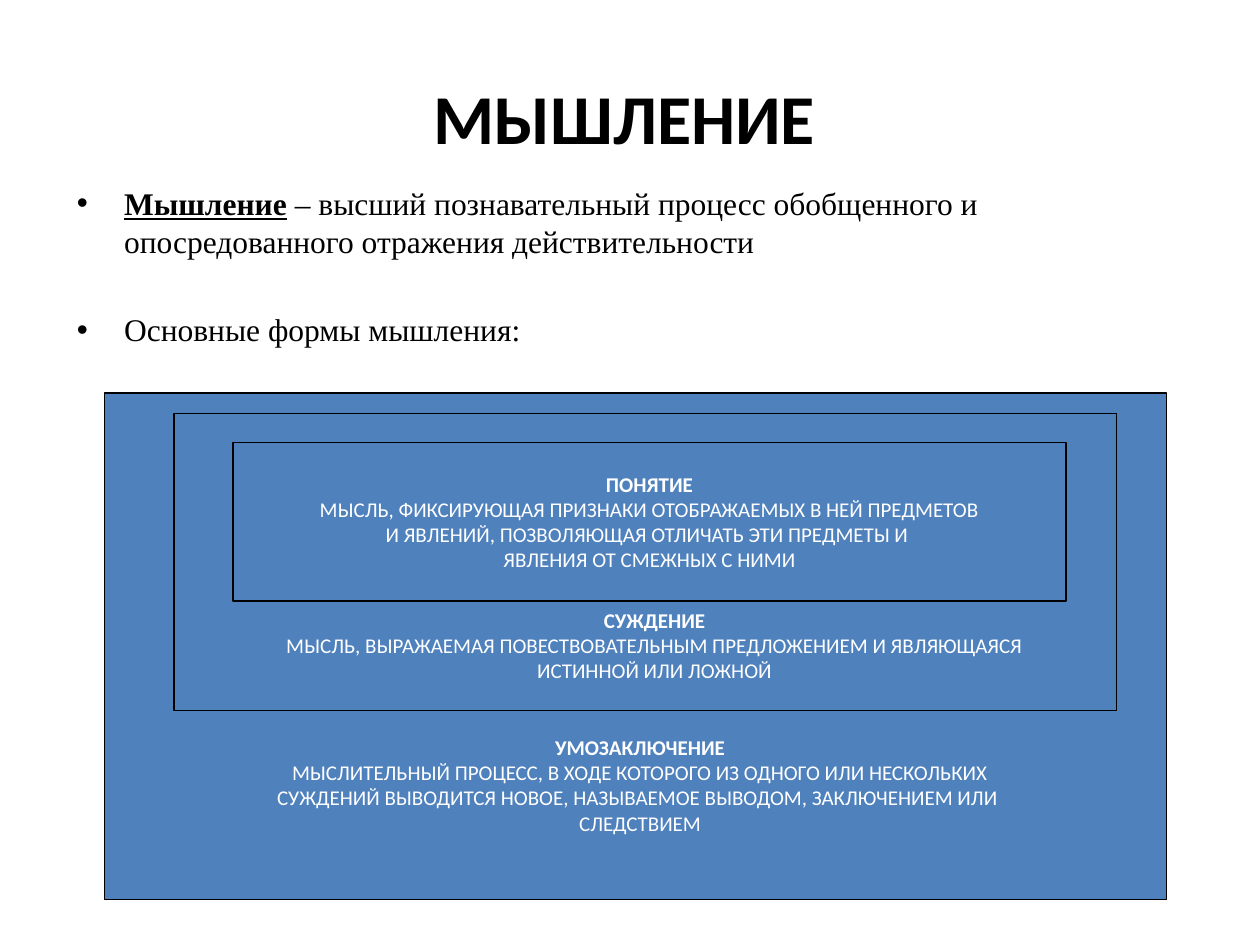
"""Build a slide on thinking and its three nested forms."""
from dataclasses import dataclass

import pptx
import pptx.dml.color
import pptx.enum.shapes
import pptx.enum.text
import pptx.util

CELL = pptx.util.Inches(0.1)
COLS, ROWS = 100, 75


@dataclass(frozen=True)
class Theme:
    fill: str = "4F81BD"
    dark: str = "000000"
    light: str = "FFFFFF"
    heading_font: str = "Calibri"
    body_font: str = "Times New Roman"
    title: int = 40
    title_end: int = 28
    body: int = 18
    label: int = 12
    line: float = 0.75
    item_gap: int = 29


@dataclass(frozen=True)
class Box:
    col: float
    row: float
    cols: float
    rows: float

    def emu(self) -> list[int]:
        return [round(n * CELL) for n in (self.col, self.row, self.cols, self.rows)]


@dataclass(frozen=True)
class Form:
    name: str
    lines: tuple[str, ...]
    frame: Box
    label: Box
    wrap: bool = True


THEME = Theme()
TITLE = Box(5, 3, 90, 12.5)
BODY = Box(5.1, 14.1, 90, 53.3)
CONCEPT = Box(18.5, 35.1, 66.1, 12.6)
FORMS = (
    Form("УМОЗАКЛЮЧЕНИЕ",
         ("МЫСЛИТЕЛЬНЫЙ ПРОЦЕСС, В ХОДЕ КОТОРОГО ИЗ ОДНОГО ИЛИ НЕСКОЛЬКИХ",
          "СУЖДЕНИЙ ВЫВОДИТСЯ НОВОЕ, НАЗЫВАЕМОЕ ВЫВОДОМ, ЗАКЛЮЧЕНИЕМ ИЛИ ",
          "СЛЕДСТВИЕМ"),
         Box(8.3, 31.2, 84.3, 40.2), Box(12.2, 57.8, 77.2, 11.1)),
    Form("СУЖДЕНИЕ",
         ("МЫСЛЬ, ВЫРАЖАЕМАЯ ПОВЕСТВОВАТЕЛЬНЫМ ПРЕДЛОЖЕНИЕМ И ЯВЛЯЮЩАЯСЯ "
          "ИСТИННОЙ ИЛИ ЛОЖНОЙ",),
         Box(13.8, 32.8, 74.8, 23.6), Box(17.7, 47.7, 68.5, 7.1)),
    Form("ПОНЯТИЕ",
         ("МЫСЛЬ, ФИКСИРУЮЩАЯ ПРИЗНАКИ ОТОБРАЖАЕМЫХ В НЕЙ ПРЕДМЕТОВ",
          "И ЯВЛЕНИЙ, ПОЗВОЛЯЮЩАЯ ОТЛИЧАТЬ ЭТИ ПРЕДМЕТЫ И ",
          "ЯВЛЕНИЯ ОТ СМЕЖНЫХ С НИМИ"),
         CONCEPT, CONCEPT, wrap=False),
)


def rgb(value: str) -> pptx.dml.color.RGBColor:
    return pptx.dml.color.RGBColor.from_string(value)


def add_run(p, text: str, font: str, size: int, color: str,
            bold: bool = False, underline: bool = False) -> None:
    r = p.add_run()
    r.text = text
    r.font.name, r.font.size = font, pptx.util.Pt(size)
    r.font.bold, r.font.underline = bold, underline
    r.font.color.rgb = rgb(color)


def place(sp, box: Box) -> None:
    sp.left, sp.top, sp.width, sp.height = box.emu()


def fill_title(sp) -> None:
    place(sp, TITLE)
    p = sp.text_frame.paragraphs[0]
    p.alignment = pptx.enum.text.PP_ALIGN.CENTER
    add_run(p, "МЫШЛЕНИЕ", THEME.heading_font, THEME.title, THEME.dark, bold=True)
    add_run(p, " ", THEME.heading_font, THEME.title_end, THEME.dark)


def fill_body(sp) -> None:
    place(sp, BODY)
    tf = sp.text_frame
    style = (THEME.body_font, THEME.body, THEME.dark)
    p = tf.paragraphs[0]
    add_run(p, "Мышление", *style, bold=True, underline=True)
    add_run(p, " – высший познавательный процесс обобщенного и "
               "опосредованного отражения действительности", *style)
    p = tf.add_paragraph()
    p.space_before = pptx.util.Pt(THEME.item_gap)
    add_run(p, "Основные формы мышления:", *style)


def add_frame(s, box: Box):
    sp = s.shapes.add_shape(pptx.enum.shapes.MSO_SHAPE.RECTANGLE, *box.emu())
    sp.shadow.inherit = False
    sp.fill.solid()
    sp.fill.fore_color.rgb = rgb(THEME.fill)
    sp.line.color.rgb = rgb(THEME.dark)
    sp.line.width = pptx.util.Pt(THEME.line)
    return sp


def write_label(sp, form: Form) -> None:
    tf = sp.text_frame
    tf.word_wrap = form.wrap
    for i, text in enumerate((form.name, *form.lines)):
        p = tf.add_paragraph() if i else tf.paragraphs[0]
        p.alignment = pptx.enum.text.PP_ALIGN.CENTER
        add_run(p, text, THEME.heading_font, THEME.label, THEME.light, bold=i == 0)


def main() -> None:
    prs = pptx.Presentation()
    prs.slide_width, prs.slide_height = COLS * CELL, ROWS * CELL
    s = prs.slides.add_slide(prs.slide_layouts[1])
    fill_title(s.shapes.title)
    fill_body(s.placeholders[1])
    frames = [add_frame(s, form.frame) for form in FORMS]
    for form, frame in zip(FORMS, frames):
        inside = form.label == form.frame
        write_label(frame if inside else s.shapes.add_textbox(*form.label.emu()), form)
    prs.save("out.pptx")


if __name__ == "__main__":
    main()
